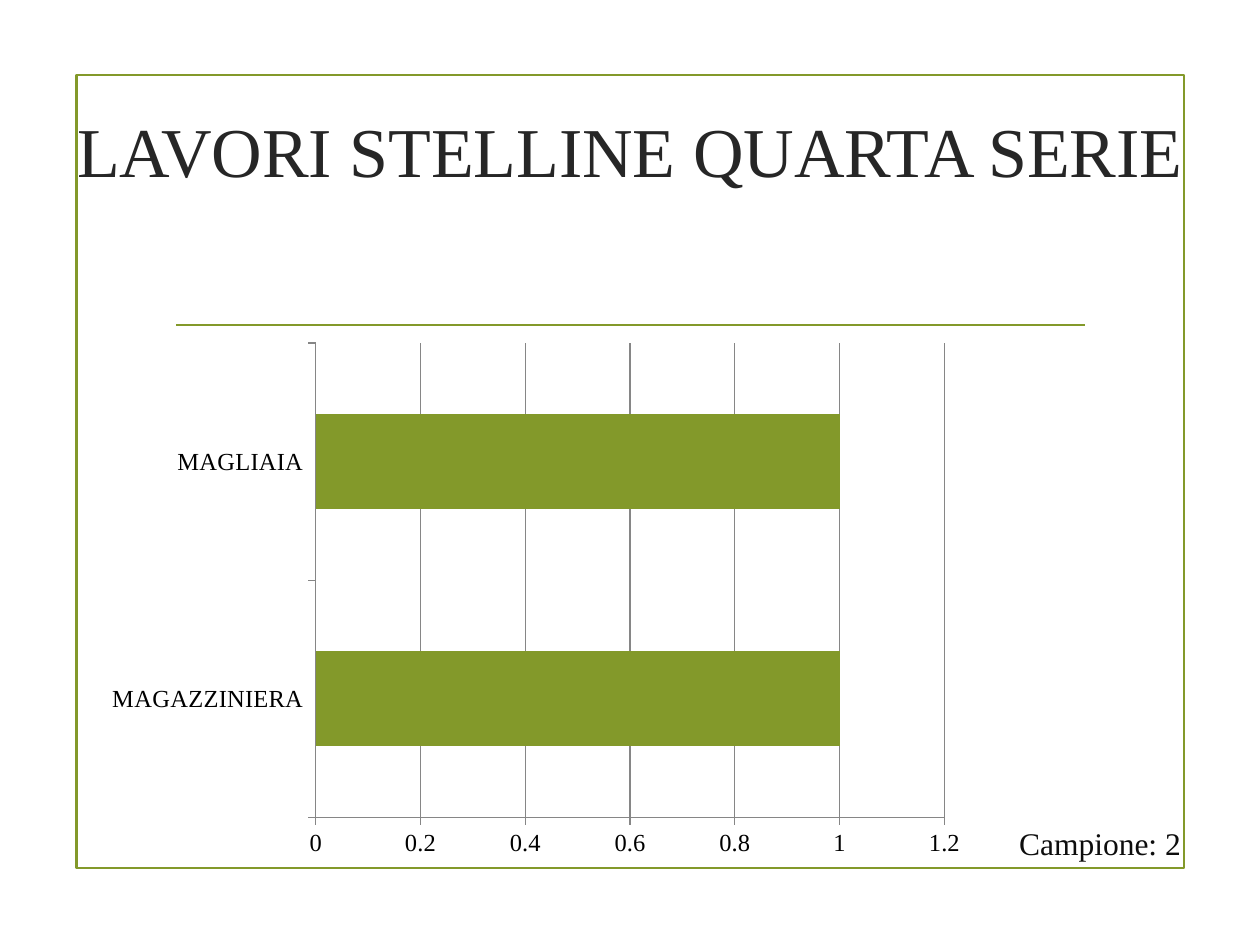
from lxml import etree
from pptx import Presentation
from pptx.chart.data import CategoryChartData
from pptx.dml.color import RGBColor
from pptx.enum.chart import XL_CHART_TYPE as ChartType, XL_TICK_MARK as TickMark
from pptx.enum.shapes import MSO_CONNECTOR as Connector, MSO_SHAPE as Shape
from pptx.enum.text import MSO_ANCHOR as Anchor, MSO_AUTO_SIZE as AutoSize, PP_ALIGN as Align
from pptx.oxml.ns import qn
from pptx.util import Pt


def color(value):
    return RGBColor.from_string(value)


def apply(target, **values):
    for name, value in values.items():
        setattr(target, name, value)


class SlideBuilder:
    FONT = "Times New Roman"
    GREEN = "83992A"
    GRID = "868686"

    def __init__(self, slide):
        self.slide = slide

    def style_font(self, font, size, fill):
        apply(font, name=self.FONT, size=Pt(size))
        font.color.rgb = color(fill)

    def style_line(self, line, fill, width):
        line.color.rgb = color(fill)
        line.width = Pt(width)

    def frame(self, *box):
        shape = self.slide.shapes.add_shape(Shape.RECTANGLE, *map(Pt, box))
        shape.shadow.inherit = False
        shape.fill.background()
        self.style_line(shape.line, self.GREEN, 1.25)

    def rule(self, left, right, top):
        line = self.slide.shapes.add_connector(
            Connector.STRAIGHT, Pt(left), Pt(top), Pt(right), Pt(top))
        etree.SubElement(line._element.spPr, qn("a:effectLst"))
        self.style_line(line.line, self.GREEN, 1.25)

    def set_text(self, shape, text, size, fill, align, **frame_format):
        apply(shape.text_frame, text=text, **frame_format)
        paragraph = shape.text_frame.paragraphs[0]
        paragraph.alignment = align
        self.style_font(paragraph.runs[0].font, size, fill)

    def title(self, text, left, top, width, height):
        title = self.slide.shapes.title
        apply(title, left=Pt(left), top=Pt(top), width=Pt(width), height=Pt(height))
        self.set_text(title, text, 40, "262626", Align.CENTER, word_wrap=True,
                      auto_size=AutoSize.NONE, vertical_anchor=Anchor.MIDDLE,
                      margin_left=0, margin_right=0)

    def label(self, text, *box):
        shape = self.slide.shapes.add_textbox(*map(Pt, box))
        self.set_text(shape, text, 18, "0D0D0D", Align.LEFT, word_wrap=True,
                      auto_size=AutoSize.SHAPE_TO_FIT_TEXT)

    def bar_chart(self, categories, values, *box):
        data = CategoryChartData()
        data.categories = categories
        data.add_series("Series 1", values)
        chart = self.slide.shapes.add_chart(
            ChartType.BAR_CLUSTERED, *map(Pt, box), data).chart
        apply(chart, has_legend=False, has_title=False)
        self.style_font(chart.font, 10, "000000")
        plot = chart.plots[0]
        apply(plot, gap_width=150, vary_by_categories=False)
        fill = plot.series[0].format.fill
        fill.solid()
        fill.fore_color.rgb = color(self.GREEN)
        for axis in (chart.category_axis, chart.value_axis):
            apply(axis, major_tick_mark=TickMark.OUTSIDE, minor_tick_mark=TickMark.NONE)
            self.style_font(axis.tick_labels.font, 14, "000000")
            self.style_line(axis.format.line, self.GRID, 0.75)
        axis = chart.value_axis
        apply(axis, minimum_scale=0, maximum_scale=1.2, major_unit=0.2,
              has_major_gridlines=True)
        self.style_line(axis.major_gridlines.format.line, self.GRID, 0.75)


def main():
    presentation = Presentation()
    apply(presentation, slide_width=Pt(720), slide_height=Pt(540))
    slide = presentation.slides.add_slide(presentation.slide_layouts[5])
    builder = SlideBuilder(slide)
    builder.frame(43.7, 42.7, 633, 453.4)
    builder.rule(100.8, 620, 185.6)
    builder.title("LAVORI STELLINE QUARTA SERIE", 36.7, 37.4, 646.6, 95.8)
    builder.bar_chart(["MAGAZZINIERA", "MAGLIAIA"], [1, 1], 54, 190, 504.7, 306)
    builder.label("Campione: 2", 575.3, 467.3, 115.9, 28.8)
    presentation.save("out.pptx")


if __name__ == "__main__":
    main()
